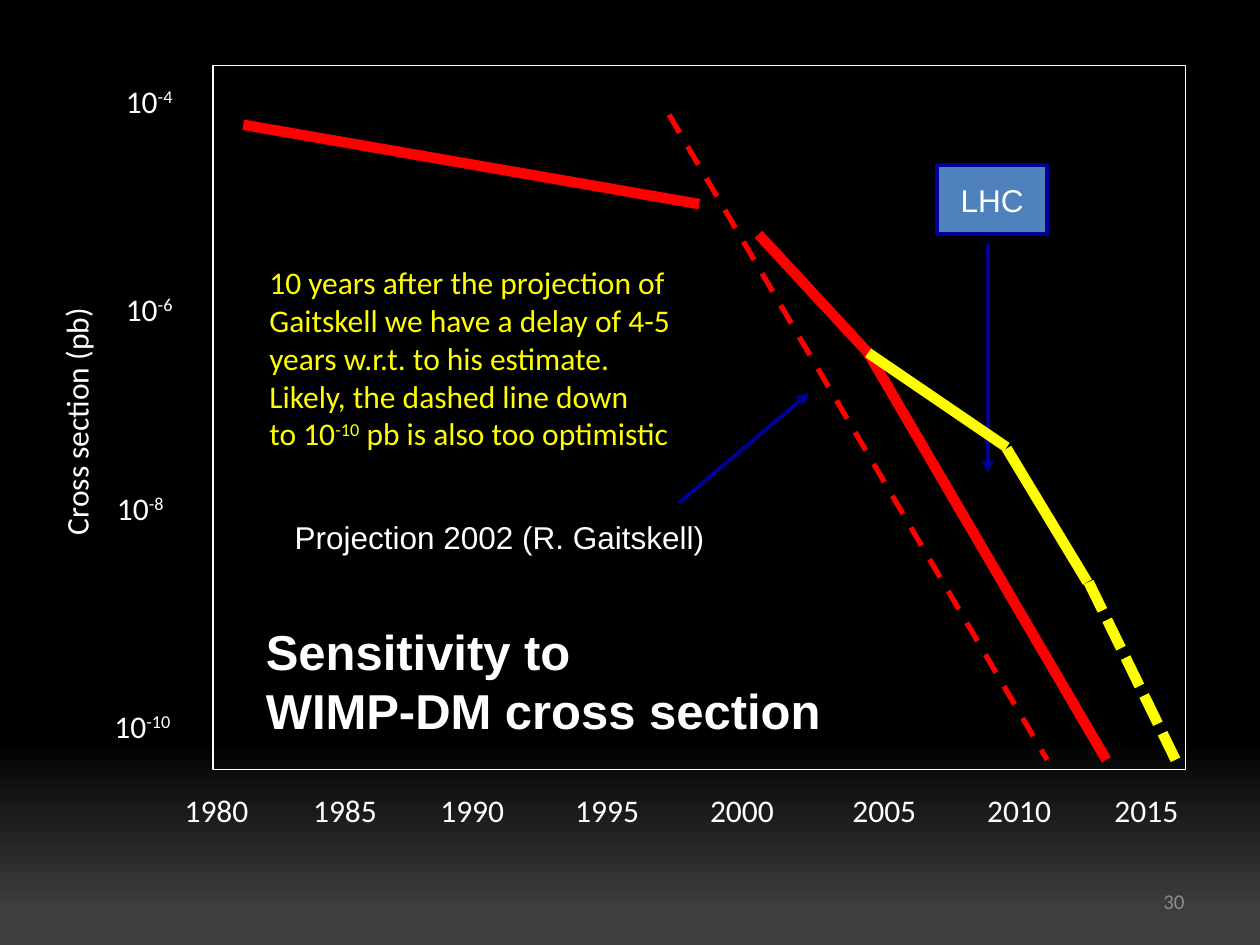
from lxml import etree
from pptx import Presentation
from pptx.dml.color import RGBColor
from pptx.enum.dml import MSO_LINE
from pptx.enum.shapes import MSO_CONNECTOR, MSO_SHAPE
from pptx.enum.text import MSO_ANCHOR, MSO_AUTO_SIZE, PP_ALIGN
from pptx.oxml.ns import qn
from pptx.util import Inches, Pt

STRAIGHT = MSO_CONNECTOR.STRAIGHT
RECTANGLE = MSO_SHAPE.RECTANGLE
DASH, DOT = MSO_LINE.DASH, MSO_LINE.SQUARE_DOT
TOP, MIDDLE = MSO_ANCHOR.TOP, MSO_ANCHOR.MIDDLE
LEFT, CENTER, RIGHT = PP_ALIGN.LEFT, PP_ALIGN.CENTER, PP_ALIGN.RIGHT
NO_AUTOFIT = MSO_AUTO_SIZE.NONE

COLORS = {
    "white": "FFFFFF", "red": "FF0000", "yellow": "FFFF00",
    "navy": "000099", "blue": "4F81BD", "grey": "8C8C8C",
}


def rgb(name):
    return RGBColor.from_string(COLORS[name])


def write(shape, lines, color="white", font="Calibri", size=18, bold=False,
          align=LEFT, anchor=TOP, wrap=False):
    """Fill a shape with lines of text; in a line, ^ opens and closes a superscript."""
    frame = shape.text_frame
    frame.auto_size = NO_AUTOFIT
    frame.word_wrap = wrap
    frame.vertical_anchor = anchor
    for number, line in enumerate(lines):
        paragraph = frame.add_paragraph() if number else frame.paragraphs[0]
        paragraph.alignment = align
        for part, words in enumerate(line.split("^")):
            if not words:
                continue
            run = paragraph.add_run()
            run.text = words
            style = {"name": font, "size": Pt(size), "bold": bold}
            for attribute, value in style.items():
                setattr(run.font, attribute, value)
            run.font.color.rgb = rgb(color)
            if part % 2:
                run.font._element.set("baseline", "30000")


prs = Presentation()
prs.slide_width, prs.slide_height = Inches(10), Inches(7.5)
slide = prs.slides.add_slide(prs.slide_layouts[5])
shapes = slide.shapes

# Background: black, fading to grey at the bottom
background = slide.background.fill
background.gradient()
background.gradient_angle = 270
stops = next(slide.element.iter(qn("a:gsLst")))
for stop in list(stops):
    stops.remove(stop)
for percent, shade in [(0, "0D0D0D"), (0, "000000"), (78, "000000"),
                       (97, "404040"), (100, "404040")]:
    stop = etree.SubElement(stops, qn("a:gs"), pos=str(percent * 1000))
    etree.SubElement(stop, qn("a:srgbClr"), val=shade)

# Plot frame and LHC box
frame_box = shapes.add_shape(RECTANGLE, Inches(1.69), Inches(0.52), Inches(7.72), Inches(5.59))
frame_box.fill.background()
lhc = shapes.add_shape(RECTANGLE, Inches(7.44), Inches(1.31), Inches(0.87), Inches(0.55))
lhc.fill.solid()
lhc.fill.fore_color.rgb = rgb("blue")
for box, color, width in [(frame_box, "white", 0.75), (lhc, "navy", 2.25)]:
    box.shadow.inherit = False
    box.line.color.rgb = rgb(color)
    box.line.width = Pt(width)
write(lhc, ["LHC"], font="Arial", align=CENTER, anchor=MIDDLE)

# Sensitivity curves and pointers: start, end, colour, width, dash, arrowhead
segments = [
    ((1.93, 0.99), (5.55, 1.62), "red", 6, None, False),
    ((5.31, 0.91), (8.31, 6.03), "red", 3, DASH, False),
    ((7.84, 1.94), (7.84, 3.75), "navy", 2.25, None, True),
    ((6.02, 1.86), (6.89, 2.8), "red", 6, None, False),
    ((6.89, 2.8), (8.78, 6.03), "red", 6, None, False),
    ((5.39, 3.99), (6.42, 3.12), "navy", 2.25, None, True),
    ((6.89, 2.8), (7.99, 3.55), "yellow", 6, None, False),
    ((7.99, 3.56), (8.63, 4.62), "yellow", 6, None, False),
    ((8.64, 4.62), (9.33, 6.03), "yellow", 6, DOT, False),
]
for start, end, color, width, dash, arrow in segments:
    segment = shapes.add_connector(STRAIGHT, *map(Inches, start + end))
    segment.line.color.rgb = rgb(color)
    segment.line.width = Pt(width)
    if dash:
        segment.line.dash_style = dash
    properties = segment.element.spPr
    if arrow:
        etree.SubElement(properties.find(qn("a:ln")), qn("a:tailEnd"), type="triangle")
    etree.SubElement(properties, qn("a:effectLst"))

# Title
title = shapes.title
title.left, title.top = Inches(2.01), Inches(4.88)
title.width, title.height = Inches(4.61), Inches(1.03)
write(title, ["Sensitivity to", "WIMP-DM cross section"], font="Arial", size=28, bold=True)

# Year axis: one line with a centred tab stop under each year
years = shapes.add_textbox(Inches(1.2), Inches(6.23), Inches(8.4), Inches(0.4))
tabs = etree.SubElement(years.text_frame.paragraphs[0]._p.get_or_add_pPr(), qn("a:tabLst"))
for position in [0.42, 1.44, 2.45, 3.52, 4.59, 5.72, 6.79, 7.8]:
    etree.SubElement(tabs, qn("a:tab"), pos=str(Inches(position)), algn="ctr")
write(years, ["".join(f"\t{year}" for year in range(1980, 2016, 5))])

# Cross section axis
for exponent, left, top, width in [(-4, 0.9, 0.6, 0.59), (-6, 0.9, 2.25, 0.59),
                                   (-8, 0.83, 3.83, 0.59), (-10, 0.81, 5.56, 0.68)]:
    tick = shapes.add_textbox(Inches(left), Inches(top), Inches(width), Inches(0.4))
    write(tick, [f"10^{exponent}^"])
axis_name = shapes.add_textbox(Inches(-0.41), Inches(3.13), Inches(2.03), Inches(0.4))
axis_name.rotation = 270
write(axis_name, ["Cross section (pb)"])

# Comments on the curves
projection = shapes.add_textbox(Inches(2.24), Inches(4.06), Inches(3.48), Inches(0.4))
write(projection, ["Projection 2002 (R. Gaitskell)"], font="Arial")
comment = shapes.add_textbox(Inches(2.04), Inches(2.04), Inches(3.47), Inches(1.62))
write(comment, [
    "10 years after the projection of",
    "Gaitskell we have a delay of 4-5",
    "years w.r.t. to his estimate.",
    "Likely, the dashed line down",
    "to 10^-10^ pb is also too optimistic",
], color="yellow")

page_number = shapes.add_textbox(Inches(7.17), Inches(6.95), Inches(2.33), Inches(0.4))
write(page_number, ["30"], color="grey", size=12, align=RIGHT, anchor=MIDDLE, wrap=True)

prs.save("out.pptx")
